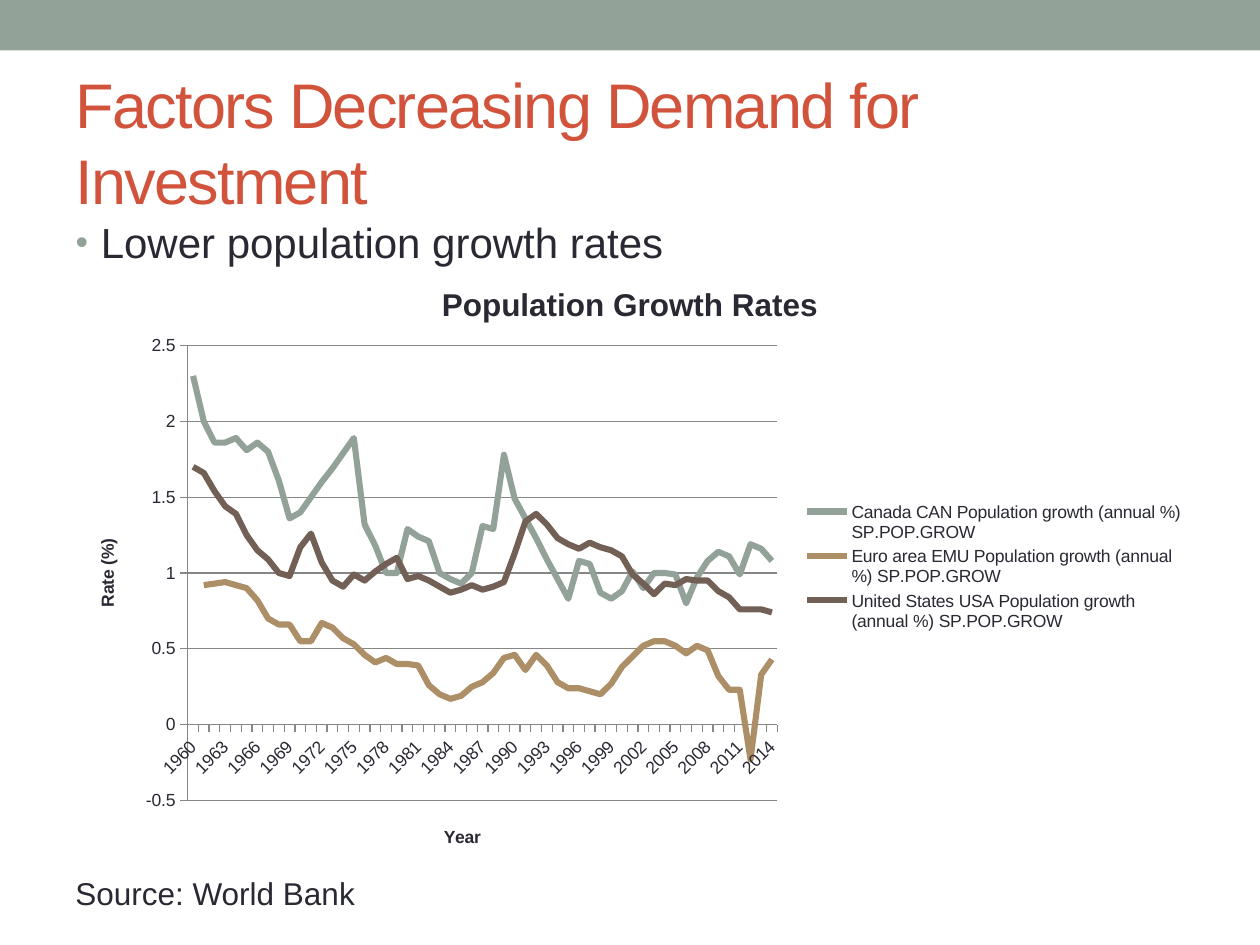
"""Build the slide on falling population growth, with its line chart."""
from lxml import etree
from pptx import Presentation, util as u
from pptx.chart import data as d
from pptx.dml.color import RGBColor
from pptx.enum import chart as c, shapes, text
from pptx.oxml import parse_xml
from pptx.oxml.ns import nsdecls, qn

Pt = u.Pt
COLS = {"sage": "93A299", "tan": "AD8F67", "brown": "726056",
        "red": "D2533C", "ink": "292934", "grid": "868686"}
ROWS = {
    "Canada CAN": ("sage", [
        2.3, 2, 1.86, 1.86, 1.89, 1.81, 1.86, 1.8, 1.61, 1.36, 1.4,
        1.5, 1.6, 1.69, 1.79, 1.89, 1.32, 1.18, 1, 1, 1.29, 1.24,
        1.21, 1, 0.96, 0.93, 1, 1.31, 1.29, 1.78, 1.49, 1.36, 1.23,
        1.09, 0.96, 0.83, 1.08, 1.06, 0.87, 0.83, 0.88, 1.01, 0.9, 1,
        1, 0.99, 0.8, 0.97, 1.08, 1.14, 1.11, 0.99, 1.19, 1.16, 1.08]),
    "Euro area EMU": ("tan", [
        None, 0.92, 0.93, 0.94, 0.92, 0.9, 0.82, 0.7, 0.66, 0.66, 0.55,
        0.55, 0.67, 0.64, 0.57, 0.53, 0.46, 0.41, 0.44, 0.4, 0.4, 0.39,
        0.26, 0.2, 0.17, 0.19, 0.25, 0.28, 0.34, 0.44, 0.46, 0.36, 0.46,
        0.39, 0.28, 0.24, 0.24, 0.22, 0.2, 0.27, 0.38, 0.45, 0.52, 0.55,
        0.55, 0.52, 0.47, 0.52, 0.49, 0.32, 0.23, 0.23, -0.23, 0.33, 0.43]),
    "United States USA": ("brown", [
        1.7, 1.66, 1.54, 1.44, 1.39, 1.25, 1.15, 1.09, 1, 0.98, 1.17,
        1.26, 1.07, 0.95, 0.91, 0.99, 0.95, 1.01, 1.06, 1.1, 0.96, 0.98,
        0.95, 0.91, 0.87, 0.89, 0.92, 0.89, 0.91, 0.94, 1.13, 1.34, 1.39,
        1.32, 1.23, 1.19, 1.16, 1.2, 1.17, 1.15, 1.11, 0.99, 0.93, 0.86,
        0.93, 0.92, 0.96, 0.95, 0.95, 0.88, 0.84, 0.76, 0.76, 0.76, 0.74]),
}


def style(font, size, col="ink", bold=False):
    """Set face, size, weight and colour of a font."""
    font.name, font.size, font.bold = "Arial", Pt(size), bold
    font.color.rgb = RGBColor.from_string(COLS[col])


def place(shape, left, top, wide, high):
    """Move and size a shape in points."""
    shape.left, shape.top = Pt(left), Pt(top)
    shape.width, shape.height = Pt(wide), Pt(high)


prs = Presentation()
prs.slide_width, prs.slide_height = Pt(720), Pt(540)
slide = prs.slides.add_slide(prs.slide_layouts[1])

band = slide.shapes.add_shape(shapes.MSO_SHAPE.RECTANGLE, 0, 0, Pt(720), Pt(28.8))
band.shadow.inherit = False
band.fill.solid()
band.fill.fore_color.rgb = RGBColor.from_string(COLS["sage"])
band.line.fill.background()

title, body = slide.placeholders
place(title, 36, 41.76, 648, 77.76)
title.text_frame.text = "Factors Decreasing Demand for Investment"
title.text_frame.auto_size = text.MSO_AUTO_SIZE.NONE
title.text_frame.vertical_anchor = text.MSO_ANCHOR.MIDDLE
para = title.text_frame.paragraphs[0]
para.alignment = text.PP_ALIGN.LEFT
style(para.runs[0].font, 36, "red")
para.runs[0].font._element.set("spc", "-100")

place(body, 36, 120.24, 648, 383.76)
body.text_frame.text = "Lower population growth rates"
body.text_frame.auto_size = text.MSO_AUTO_SIZE.NONE
para = body.text_frame.paragraphs[0]
style(para.runs[0].font, 24)
props = para._p.get_or_add_pPr()
props.set("marL", str(Pt(14.4)))
props.set("indent", str(-Pt(14.4)))
tint = etree.SubElement(props, qn("a:buClr"))
etree.SubElement(tint, qn("a:srgbClr"), val=COLS["sage"])
etree.SubElement(props, qn("a:buSzPct"), val="85000")
etree.SubElement(props, qn("a:buFont"), typeface="Arial")
etree.SubElement(props, qn("a:buChar"), char="•")

data = d.CategoryChartData()
data.categories = [str(year) for year in range(1960, 2015)]
for land, (col, vals) in ROWS.items():
    data.add_series(f"{land} Population growth (annual %) SP.POP.GROW", vals)
chart = slide.shapes.add_chart(
    c.XL_CHART_TYPE.LINE, Pt(36), Pt(148.32), Pt(648), Pt(351.36), data).chart
style(chart.font, 10)
chart.has_title = True
chart.chart_title.text_frame.text = "Population Growth Rates"
style(chart.chart_title.text_frame.paragraphs[0].runs[0].font, 18, bold=True)
chart.has_legend = True
chart.legend.position = c.XL_LEGEND_POSITION.RIGHT
chart.legend.include_in_layout = False
style(chart.legend.font, 10)

for line, (col, vals) in zip(chart.plots[0].series, ROWS.values()):
    line.smooth = False
    line.format.line.width = Pt(3.5)
    line.format.line.color.rgb = RGBColor.from_string(COLS[col])

years, rates = chart.category_axis, chart.value_axis
for axis, name in ((years, "Year"), (rates, "Rate (%)")):
    axis.axis_title.text_frame.text = name
    style(axis.axis_title.text_frame.paragraphs[0].runs[0].font, 10, bold=True)
    style(axis.tick_labels.font, 10)
    axis.major_tick_mark = c.XL_TICK_MARK.OUTSIDE
    axis.minor_tick_mark = c.XL_TICK_MARK.NONE
    axis.format.line.color.rgb = RGBColor.from_string(COLS["grid"])
rates.axis_title.text_frame._txBody.bodyPr.set("rot", "-5400000")
rates.minimum_scale, rates.maximum_scale, rates.major_unit = -0.5, 2.5, 0.5
rates.tick_labels.number_format = "General"
rates.tick_labels.number_format_is_linked = False
rates.has_major_gridlines = True
rates.major_gridlines.format.line.color.rgb = RGBColor.from_string(COLS["grid"])
years._element.xpath("c:txPr/a:bodyPr")[0].set("rot", "-2700000")
skip = parse_xml(f'<c:tickLblSkip {nsdecls("c")} val="3"/>')
years._element.xpath("c:noMultiLvlLbl")[0].addprevious(skip)

plot = chart._chartSpace.xpath("c:chart/c:plotArea")[0]
for old in plot.xpath("c:layout"):
    plot.remove(old)
frame = parse_xml(f'<c:layout {nsdecls("c")}><c:manualLayout/></c:layout>')
for tag, val in (("layoutTarget", "inner"), ("xMode", "edge"), ("yMode", "edge"),
                 ("x", "0.11"), ("y", "0.14"), ("w", "0.52"), ("h", "0.74")):
    etree.SubElement(frame[0], qn(f"c:{tag}"), val=val)
plot.insert(0, frame)

note = slide.shapes.add_textbox(Pt(36), Pt(496.08), Pt(218.16), Pt(28.8))
note.text_frame.word_wrap = True
note.text_frame.auto_size = text.MSO_AUTO_SIZE.SHAPE_TO_FIT_TEXT
note.text_frame.text = "Source: World Bank"
style(note.text_frame.paragraphs[0].runs[0].font, 18)

prs.save("out.pptx")
